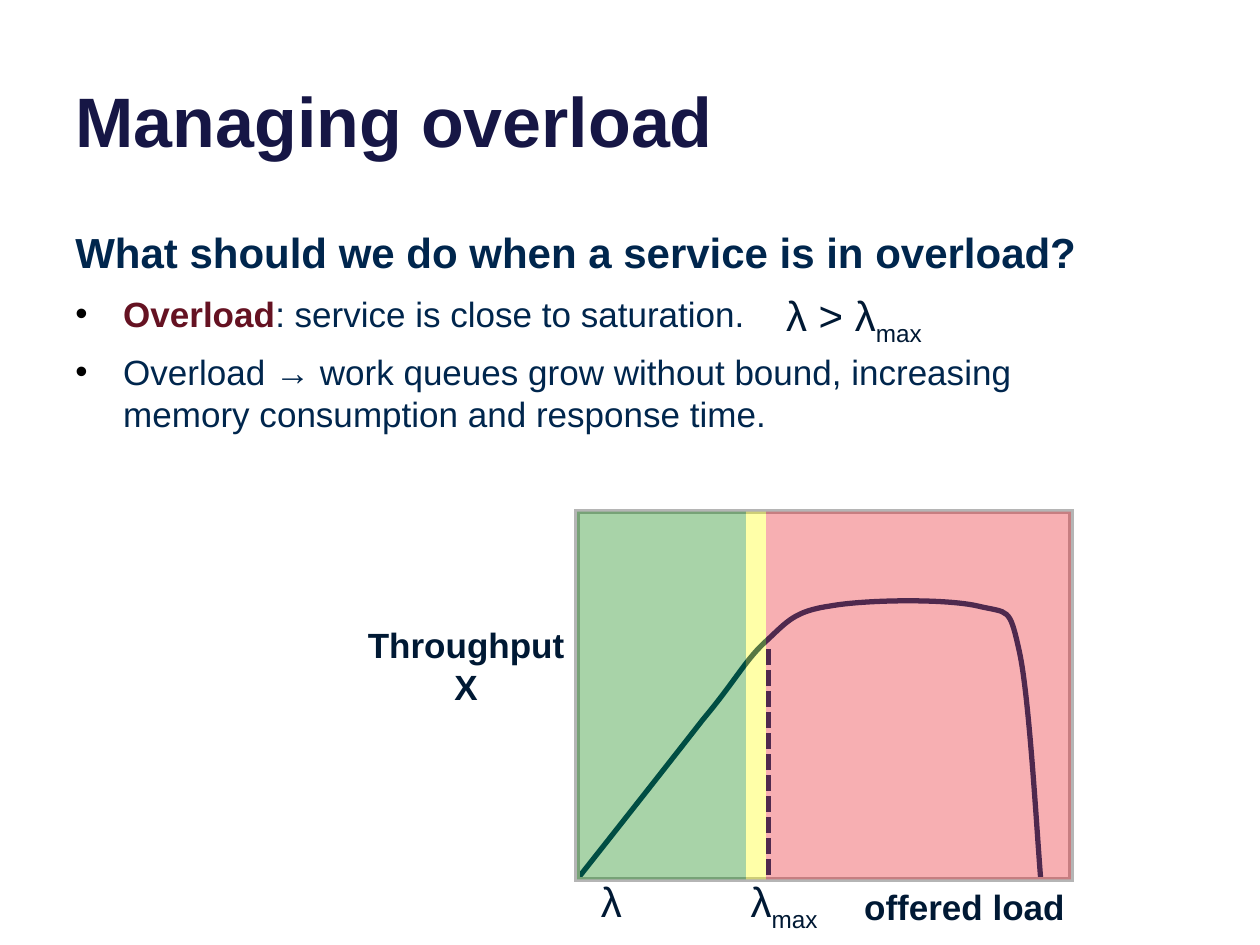
from dataclasses import dataclass

from lxml import etree
from pptx import Presentation
from pptx.dml.color import RGBColor
from pptx.enum.dml import MSO_LINE
from pptx.enum.shapes import MSO_CONNECTOR, MSO_SHAPE
from pptx.enum.text import MSO_ANCHOR, MSO_AUTO_SIZE, PP_ALIGN
from pptx.oxml.ns import qn
from pptx.util import Inches, Pt

FONT = "Arial"
TITLE, BODY, TERM, LABEL, CURVE, FRAME = (
    "161645", "00264D", "651222", "001934", "003367", "B5B5B5")
PLOT_LEFT, PLOT_TOP, PLOT_WIDTH, PLOT_HEIGHT = 4.58, 4.06, 3.92, 2.92
PLOT_RIGHT, PLOT_BOTTOM = PLOT_LEFT + PLOT_WIDTH, PLOT_TOP + PLOT_HEIGHT
WARNING_LEFT, OVERLOAD_LEFT = 5.92, 6.08


@dataclass
class Span:
    text: str
    size: int = 20
    color: str = LABEL
    bold: bool = False
    subscript: bool = False


@dataclass
class Label:
    left: float
    top: float
    width: float
    height: float
    lines: list[list[Span]]
    align: PP_ALIGN = PP_ALIGN.LEFT


@dataclass
class Zone:
    left: float
    right: float
    color: str


def rgb(value: str) -> RGBColor:
    return RGBColor.from_string(value)


def add_spans(paragraph, spans: list[Span]) -> None:
    for span in spans:
        run = paragraph.add_run()
        run.text = span.text
        run.font.name = FONT
        run.font.size = Pt(span.size)
        run.font.bold = span.bold
        run.font.color.rgb = rgb(span.color)
        if span.subscript:
            run.font._element.set("baseline", "-25000")


def add_bullet(paragraph) -> None:
    properties = paragraph._p.get_or_add_pPr()
    properties.set("marL", str(Inches(0.38)))
    properties.set("indent", str(-Inches(0.38)))
    color = etree.SubElement(properties, qn("a:buClr"))
    etree.SubElement(color, qn("a:srgbClr"), val="000000")
    etree.SubElement(properties, qn("a:buFont"), typeface=FONT)
    etree.SubElement(properties, qn("a:buChar"), char="•")


def add_title(slide, text: str) -> None:
    title = slide.shapes.title
    title.left, title.top = Inches(0.5), Inches(-0.37)
    title.width, title.height = Inches(9), Inches(1.7)
    frame = title.text_frame
    frame.vertical_anchor = MSO_ANCHOR.BOTTOM
    frame.auto_size = MSO_AUTO_SIZE.NONE
    frame.paragraphs[0].alignment = PP_ALIGN.LEFT
    add_spans(frame.paragraphs[0], [Span(text, 40, TITLE, True)])


def add_body(slide, heading: Span, bullets: list[list[Span]]) -> None:
    box = slide.shapes.add_textbox(Inches(0.5), Inches(1.75), Inches(8.67), Inches(4.5))
    frame = box.text_frame
    frame.word_wrap = True
    for index, spans in enumerate([[heading], *bullets]):
        paragraph = frame.add_paragraph() if index else frame.paragraphs[0]
        paragraph.space_before = Pt(9)
        if index:
            add_bullet(paragraph)
        add_spans(paragraph, spans)


def add_label(slide, label: Label) -> None:
    box = slide.shapes.add_textbox(
        Inches(label.left), Inches(label.top), Inches(label.width), Inches(label.height))
    frame = box.text_frame
    frame.word_wrap = False
    frame.auto_size = MSO_AUTO_SIZE.SHAPE_TO_FIT_TEXT
    for index, spans in enumerate(label.lines):
        paragraph = frame.add_paragraph() if index else frame.paragraphs[0]
        paragraph.alignment = label.align
        add_spans(paragraph, spans)


def add_plot_rectangle(shapes, left: float, right: float):
    shape = shapes.add_shape(
        MSO_SHAPE.RECTANGLE, Inches(left), Inches(PLOT_TOP),
        Inches(right - left), Inches(PLOT_HEIGHT))
    shape.shadow.inherit = False
    return shape


def style_outline(shape, color: str, join: str) -> None:
    shape.fill.background()
    shape.line.color.rgb = rgb(color)
    shape.line.width = Pt(3)
    etree.SubElement(shape.line._get_or_add_ln(), qn(join))


def add_zone(slide, zone: Zone) -> None:
    shape = add_plot_rectangle(slide.shapes, zone.left, zone.right)
    shape.fill.solid()
    shape.fill.fore_color.rgb = rgb(zone.color)
    shape.line.fill.background()
    color = shape._element.spPr.find(qn("a:solidFill")).find(qn("a:srgbClr"))
    etree.SubElement(color, qn("a:alpha"), val="34000")


def bend_segments(freeform) -> None:
    """Turn each three straight segments into one cubic curve."""
    outline = next(freeform._element.iter(qn("a:path")))
    segments = outline.findall(qn("a:lnTo"))
    for first in range(0, len(segments), 3):
        cubic = etree.SubElement(outline, qn("a:cubicBezTo"))
        for segment in segments[first:first + 3]:
            cubic.append(segment[0])
            outline.remove(segment)


def add_throughput_curve(shapes, knots: list[tuple[float, float]]) -> None:
    start, *rest = [(Inches(x), Inches(y)) for x, y in knots]
    builder = shapes.build_freeform(*start)
    builder.add_line_segments(rest, close=False)
    curve = builder.convert_to_shape()
    bend_segments(curve)
    curve.shadow.inherit = False
    style_outline(curve, CURVE, "a:round")


def add_saturation_line(slide) -> None:
    line = slide.shapes.add_connector(
        MSO_CONNECTOR.STRAIGHT, Inches(6.1), Inches(5.15), Inches(6.1), Inches(6.97))
    line.line.color.rgb = rgb(CURVE)
    line.line.width = Pt(3)
    line.line.dash_style = MSO_LINE.SQUARE_DOT
    etree.SubElement(line._element.spPr, qn("a:effectLst"))


def main() -> None:
    presentation = Presentation()
    presentation.slide_width, presentation.slide_height = Inches(10), Inches(7.5)
    slide = presentation.slides.add_slide(presentation.slide_layouts[5])

    add_title(slide, "Managing overload")
    add_body(slide, Span("What should we do when a service is in overload?", 24, BODY, True), [
        [Span("Overload", color=TERM, bold=True),
         Span(": service is close to saturation.", color=BODY)],
        [Span("Overload → work queues grow without bound, increasing "
              "memory consumption and response time.", color=BODY)],
    ])

    maximum = Span("max", 24, subscript=True)
    add_label(slide, Label(6.14, 2.25, 1.36, 0.5, [[Span("λ > λ", 24), maximum]]))

    plot = slide.shapes.add_group_shape().shapes
    add_throughput_curve(plot, [
        (4.58, 6.98), (4.96, 6.5), (5.33, 6.03), (5.58, 5.71),
        (5.84, 5.4), (5.92, 5.23), (6.09, 5.08),
        (6.25, 4.93), (6.31, 4.85), (6.59, 4.81),
        (6.86, 4.76), (7.5, 4.75), (7.76, 4.81),
        (8.01, 4.87), (8.01, 4.81), (8.09, 5.17),
        (8.17, 5.53), (8.23, 6.62), (8.26, 6.98),
    ])
    style_outline(add_plot_rectangle(plot, PLOT_LEFT, PLOT_RIGHT), FRAME, "a:miter")

    add_label(slide, Label(4.67, 6.9, 0.38, 0.5, [[Span("λ", 24)]]))
    add_label(slide, Label(5.86, 6.9, 0.81, 0.5, [[Span("λ", 24), maximum]]))
    add_saturation_line(slide)
    for zone in (Zone(OVERLOAD_LEFT, PLOT_RIGHT, "E8161F"),
                 Zone(PLOT_LEFT, WARNING_LEFT, "008000"),
                 Zone(WARNING_LEFT, OVERLOAD_LEFT, "FFFF00")):
        add_zone(slide, zone)

    add_label(slide, Label(
        2.81, 4.9, 1.78, 0.77,
        [[Span("Throughput", bold=True)], [Span("X", bold=True)]], PP_ALIGN.CENTER))
    add_label(slide, Label(
        6.75, PLOT_BOTTOM, 1.81, 0.44, [[Span("offered load", bold=True)]], PP_ALIGN.CENTER))

    presentation.save("out.pptx")


if __name__ == "__main__":
    main()
